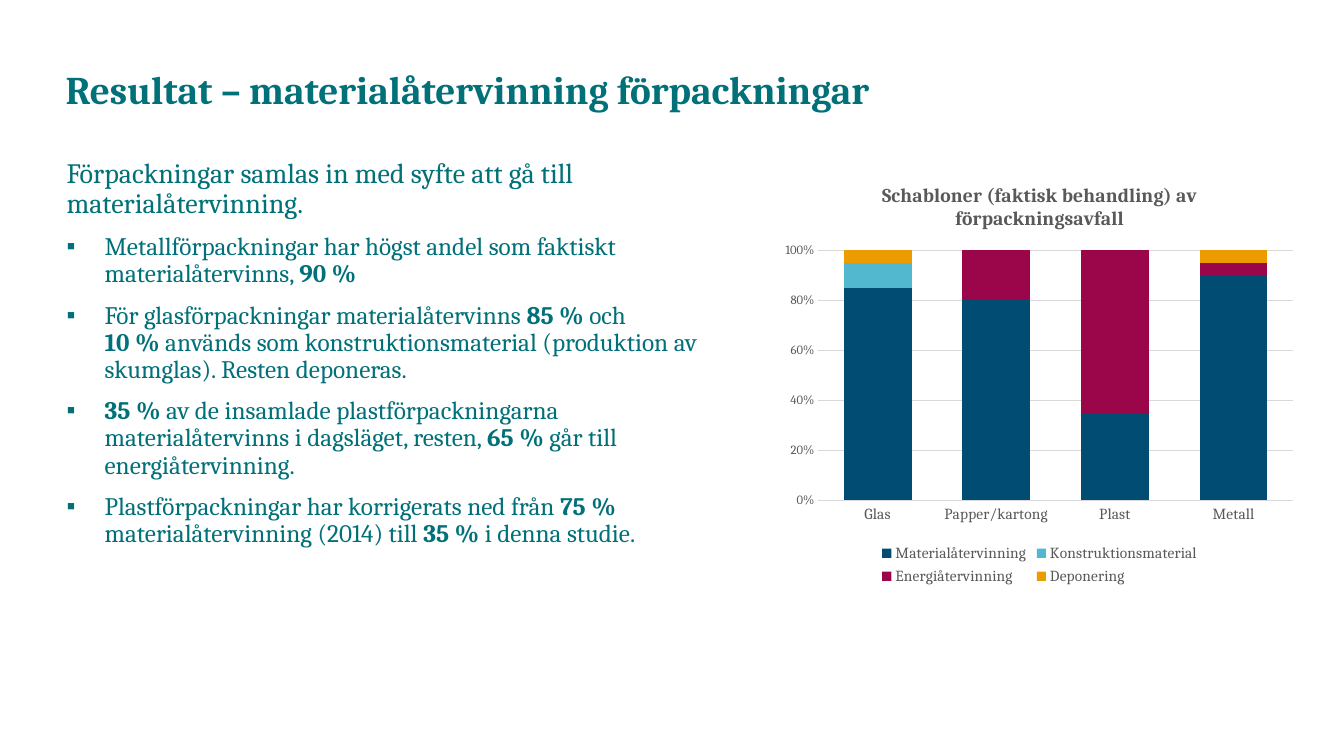
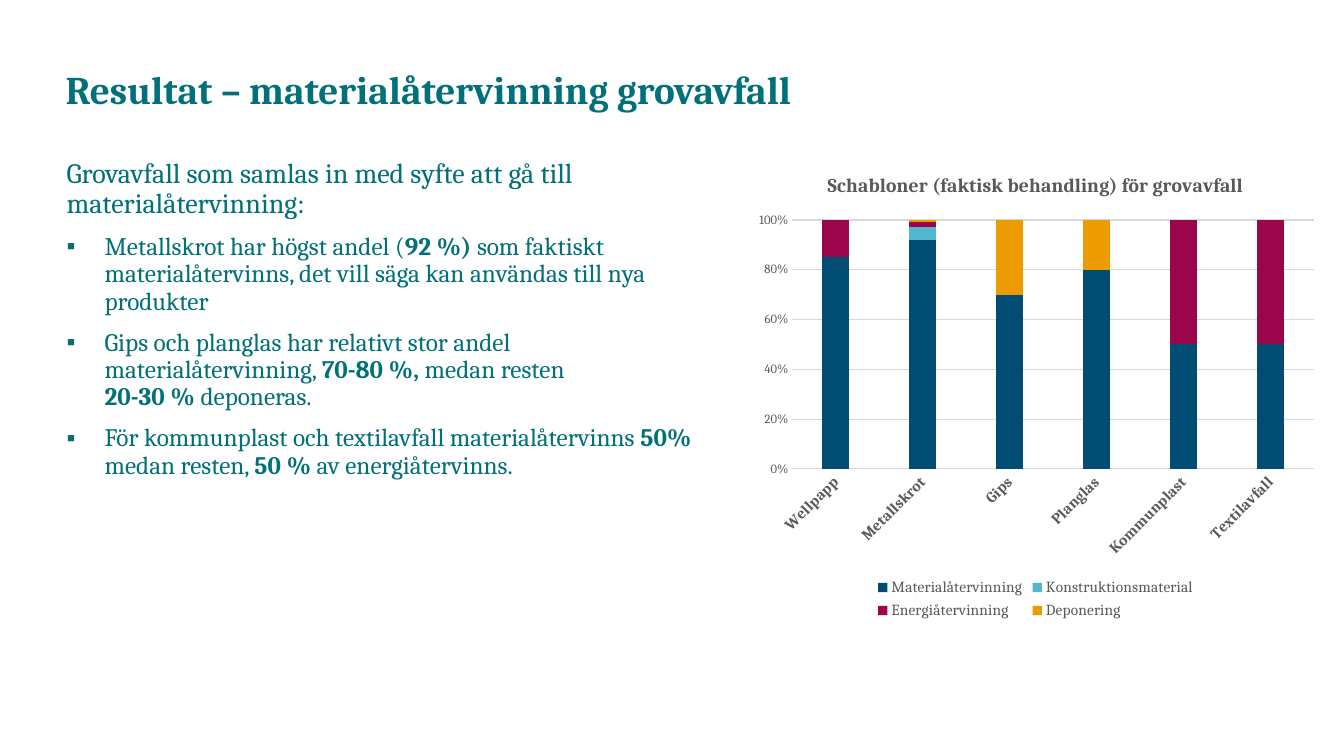
from dataclasses import dataclass

from lxml.etree import SubElement
from pptx import Presentation
from pptx.chart.chart import Chart
from pptx.chart.data import CategoryChartData
from pptx.dml.color import RGBColor
from pptx.enum.chart import XL_CHART_TYPE, XL_LEGEND_POSITION, XL_TICK_MARK
from pptx.enum.text import MSO_ANCHOR, MSO_AUTO_SIZE, PP_ALIGN
from pptx.oxml import parse_xml
from pptx.oxml.ns import nsdecls, qn
from pptx.shapes.base import BaseShape
from pptx.slide import Slide
from pptx.text.text import Font, TextFrame, _Paragraph
from pptx.util import Pt

FACE = "Cambria"
TEAL = RGBColor(0x00, 0x70, 0x79)
GREY = RGBColor(0x59, 0x59, 0x59)
PALE = RGBColor(0xD9, 0xD9, 0xD9)
BLACK = RGBColor(0x00, 0x00, 0x00)
NAVY = RGBColor(0x00, 0x4C, 0x73)
SKY = RGBColor(0x51, 0xB8, 0xCF)
WINE = RGBColor(0x9B, 0x06, 0x4A)
GOLD = RGBColor(0xEC, 0x9C, 0x00)

SERIES = (
    ("Materialåtervinning", NAVY),
    ("Konstruktionsmaterial", SKY),
    ("Energiåtervinning", WINE),
    ("Deponering", GOLD),
)


@dataclass(frozen=True)
class Box:
    left: float
    top: float
    width: float
    height: float


TITLE = Box(39.6, 40.3, 725, 50.4)
BODY = Box(40.3, 110.2, 480.2, 335.5)


@dataclass(frozen=True)
class Graph:
    title: str
    box: Box
    plot: Box
    gap: int
    bars: dict[str, tuple[int, ...]]
    slant: bool = False


@dataclass(frozen=True)
class Page:
    title: str
    lead: str
    points: tuple[tuple[str, ...], ...]
    graph: Graph


# Each point alternates plain and bold text.
PAGES = (
    Page(
        "Resultat – materialåtervinning förpackningar",
        "Förpackningar samlas in med syfte att gå till materialåtervinning.",
        (
            ("Metallförpackningar har högst andel som faktiskt materialåtervinns, ", "90 %"),
            ("För glasförpackningar materialåtervinns ", "85 % ", "och \n", "10 % ",
             "används som konstruktionsmaterial (produktion av skumglas). Resten deponeras."),
            ("", "35 % ",
             "av de insamlade plastförpackningarna materialåtervinns i dagsläget, resten, ",
             "65 % ", "går till energiåtervinning."),
            ("Plastförpackningar har korrigerats ned från ", "75 % ",
             "materialåtervinning (2014) till ", "35 % ", "i denna studie."),
        ),
        Graph(
            "Schabloner (faktisk behandling) av förpackningsavfall",
            Box(554.4, 118.1, 376.6, 303.1),
            Box(0.08, 0.2, 0.9, 0.59),
            75,
            {
                "Glas": (85, 10, 0, 5),
                "Papper/kartong": (80, 0, 20, 0),
                "Plast": (35, 0, 65, 0),
                "Metall": (90, 0, 5, 5),
            },
        ),
    ),
    Page(
        "Resultat – materialåtervinning grovavfall",
        "Grovavfall som samlas in med syfte att gå till materialåtervinning:",
        (
            ("Metallskrot har högst andel (", "92 %) ",
             "som faktiskt materialåtervinns, det vill säga kan användas till nya produkter"),
            ("Gips och planglas har relativt stor andel materialåtervinning, ",
             "70-80 %, ", "medan resten \n", "20-30 % ", "deponeras."),
            ("För kommunplast och textilavfall materialåtervinns ", "50% ",
             "medan resten, ", "50 % ", "av energiåtervinns."),
        ),
        Graph(
            "Schabloner (faktisk behandling) för grovavfall",
            Box(532.8, 110.2, 414, 335.5),
            Box(0.08, 0.14, 0.9, 0.53),
            219,
            {
                "Wellpapp": (85, 0, 15, 0),
                "Metallskrot": (92, 5, 2, 1),
                "Gips": (70, 0, 0, 30),
                "Planglas": (80, 0, 0, 20),
                "Kommunplast": (50, 0, 50, 0),
                "Textilavfall": (50, 0, 50, 0),
            },
            slant=True,
        ),
    ),
)


def style(font: Font, size: float, color: RGBColor, bold: bool = False) -> None:
    font.name = FACE
    font.size = Pt(size)
    font.bold = bold
    font.color.rgb = color


def place(shape: BaseShape, box: Box) -> None:
    shape.left, shape.top = Pt(box.left), Pt(box.top)
    shape.width, shape.height = Pt(box.width), Pt(box.height)


def add_run(para: _Paragraph, text: str, size: float, color: RGBColor, bold: bool = False) -> None:
    run = para.add_run()
    run.text = text.rstrip("\n")
    style(run.font, size, color, bold)
    if text.endswith("\n"):
        para.add_line_break()


def set_mark(para: _Paragraph, mark: str = "") -> None:
    props = para._p.get_or_add_pPr()
    indent = Pt(27.2) if mark else 0
    props.set("marL", str(indent))
    props.set("indent", str(-indent))
    if mark:
        SubElement(props, qn("a:buChar")).set("char", mark)
    else:
        SubElement(props, qn("a:buNone"))


def set_lines(para: _Paragraph, before: float) -> None:
    para.alignment = PP_ALIGN.LEFT
    para.line_spacing = 0.9
    para.space_before = Pt(before)


def set_frame(frame: TextFrame, anchor: MSO_ANCHOR) -> None:
    frame.word_wrap = True
    frame.auto_size = MSO_AUTO_SIZE.NONE
    frame.vertical_anchor = anchor


def add_title(slide: Slide, text: str) -> None:
    shape = slide.shapes.title
    place(shape, TITLE)
    set_frame(shape.text_frame, MSO_ANCHOR.MIDDLE)
    para = shape.text_frame.paragraphs[0]
    set_lines(para, 0)
    add_run(para, text, 28, TEAL, True)


def add_body(slide: Slide, page: Page) -> None:
    shape = slide.placeholders[1]
    place(shape, BODY)
    frame = shape.text_frame
    set_frame(frame, MSO_ANCHOR.TOP)
    lead = frame.paragraphs[0]
    set_mark(lead)
    set_lines(lead, 0)
    add_run(lead, page.lead, 20, TEAL)
    for point in page.points:
        para = frame.add_paragraph()
        set_mark(para, "▪")
        set_lines(para, 10)
        for place_no, text in enumerate(point):
            if text:
                add_run(para, text, 18, TEAL, place_no % 2 == 1)


def set_plot(chart: Chart, box: Box) -> None:
    area = chart._chartSpace.chart.plotArea
    for old in area.findall(qn("c:layout")):
        area.remove(old)
    area.insert(0, parse_xml(
        f'<c:layout {nsdecls("c")}><c:manualLayout><c:layoutTarget val="inner"/>'
        '<c:xMode val="edge"/><c:yMode val="edge"/>'
        f'<c:x val="{box.left}"/><c:y val="{box.top}"/>'
        f'<c:w val="{box.width}"/><c:h val="{box.height}"/>'
        '</c:manualLayout></c:layout>'
    ))


def set_axes(chart: Chart, slant: bool) -> None:
    cats, vals = chart.category_axis, chart.value_axis
    for axis in (cats, vals):
        axis.major_tick_mark = XL_TICK_MARK.NONE
        axis.minor_tick_mark = XL_TICK_MARK.NONE
    style(cats.tick_labels.font, 11, GREY, slant)
    style(vals.tick_labels.font, 9, GREY)
    if slant:
        cats._element.find(f'{qn("c:txPr")}/{qn("a:bodyPr")}').set("rot", "-2700000")
    vals.major_unit = 0.2
    vals.has_major_gridlines = True
    vals.format.line.fill.background()
    vals.tick_labels.number_format = "0%"
    vals.tick_labels.number_format_is_linked = False
    for line in (cats.format.line, vals.major_gridlines.format.line):
        line.color.rgb = PALE
        line.width = Pt(0.75)


def add_graph(slide: Slide, graph: Graph) -> None:
    data = CategoryChartData()
    data.categories = list(graph.bars)
    for (name, _), vals in zip(SERIES, zip(*graph.bars.values())):
        data.add_series(name, vals)
    box = graph.box
    chart = slide.shapes.add_chart(
        XL_CHART_TYPE.COLUMN_STACKED_100,
        Pt(box.left), Pt(box.top), Pt(box.width), Pt(box.height), data,
    ).chart
    style(chart.font, 10, BLACK)
    chart.has_title = True
    add_run(chart.chart_title.text_frame.paragraphs[0], graph.title, 14, GREY, True)
    chart.chart_title.include_in_layout = False
    chart.has_legend = True
    chart.legend.position = XL_LEGEND_POSITION.BOTTOM
    chart.legend.include_in_layout = False
    style(chart.legend.font, 11, GREY)
    plot = chart.plots[0]
    plot.gap_width = graph.gap
    plot.overlap = 100
    plot.vary_by_categories = False
    for bar, (_, color) in zip(plot.series, SERIES):
        bar.format.fill.solid()
        bar.format.fill.fore_color.rgb = color
    set_axes(chart, graph.slant)
    set_plot(chart, graph.plot)


def main() -> None:
    deck = Presentation()
    deck.slide_width, deck.slide_height = Pt(960), Pt(540)
    for page in PAGES:
        slide = deck.slides.add_slide(deck.slide_layouts[1])
        add_title(slide, page.title)
        add_body(slide, page)
        add_graph(slide, page.graph)
    deck.save("out.pptx")


if __name__ == "__main__":
    main()
